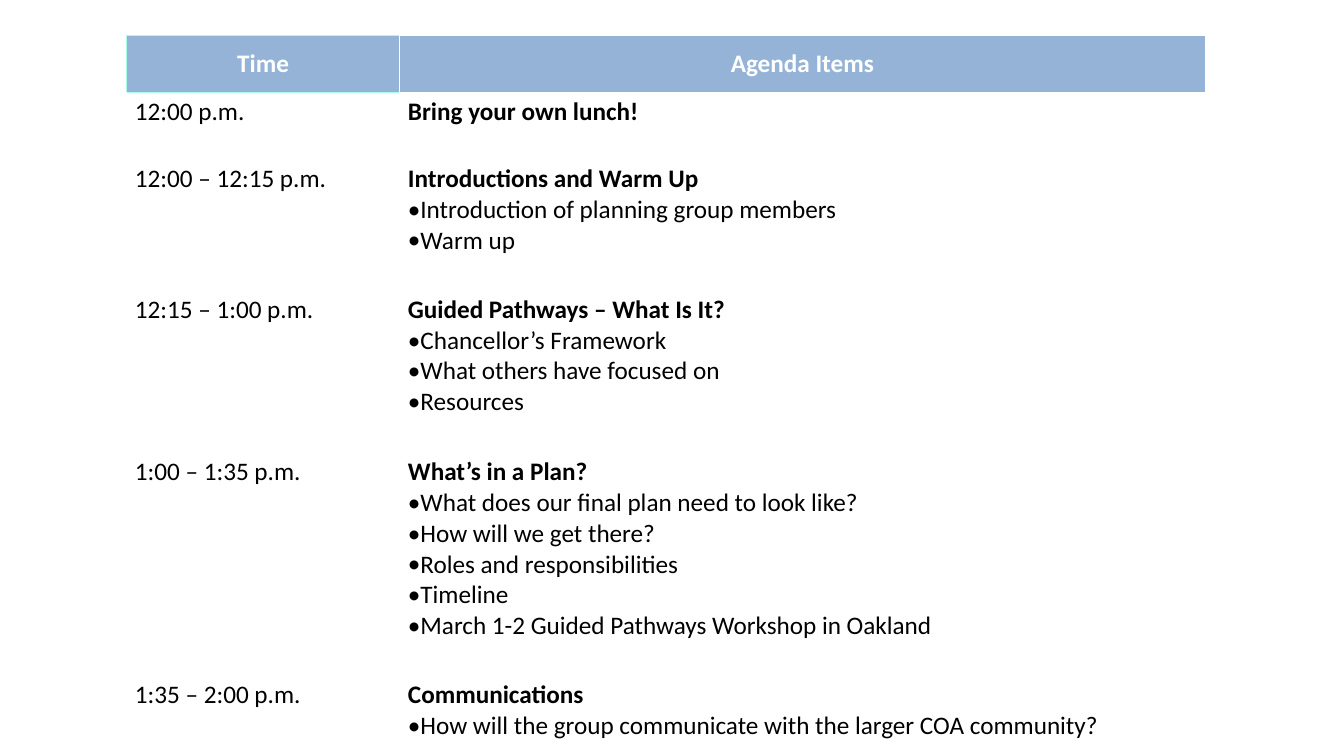
from lxml import etree
from pptx import Presentation
from pptx import util as u
from pptx.dml.color import RGBColor
from pptx.enum import text
from pptx.oxml import ns

HUES = {"head": "95B3D7", "mint": "A8FDEA", "white": "FFFFFF", "black": "000000"}
COLS = [6.88, 20.3]
HEADS = ["Time", "Agenda Items"]
AGENDA = [
    (1.68, "12:00 p.m.", "Bring your own lunch!", []),
    (3.3, "12:00 – 12:15 p.m.", "Introductions and Warm Up",
     ["Introduction of planning group members", "Warm up"]),
    (4.09, "12:15 – 1:00 p.m.", "Guided Pathways – What Is It?",
     ["Chancellor’s Framework", "What others have focused on", "Resources"]),
    (5.61, "1:00 – 1:35 p.m.", "What’s in a Plan?",
     ["What does our final plan need to look like?", "How will we get there?",
      "Roles and responsibilities", "Timeline",
      "March 1-2 Guided Pathways Workshop in Oakland"]),
    (3.68, "1:35 – 2:00 p.m.", "Communications",
     ["How will the group communicate with the larger COA community?"]),
]


def write(para, words, hue="black", bold=False, align=text.PP_ALIGN.LEFT, dot=False):
    para.alignment = align
    run = para.add_run()
    run.text = words
    font = run.font
    font.name, font.size, font.bold = "Calibri", u.Pt(18), bold
    font.color.rgb = RGBColor.from_string(HUES[hue])
    if dot:
        props = para._p.get_or_add_pPr()
        props.set("marL", "0")
        props.set("indent", "0")
        etree.SubElement(props, ns.qn("a:buFont")).set("typeface", "Calibri")
        etree.SubElement(props, ns.qn("a:buChar")).set("char", "•")


class Deck:
    def __init__(self):
        self.prs = Presentation()
        self.prs.slide_width = u.Cm(33.87)
        self.prs.slide_height = u.Cm(19.05)
        self.slide = self.prs.slides.add_slide(self.prs.slide_layouts[6])

    def grid(self, left, top, cols, rows):
        frame = self.slide.shapes.add_table(
            len(rows), len(cols), u.Cm(left), u.Cm(top), u.Cm(sum(cols)), u.Cm(sum(rows)))
        table = frame.table
        table.first_row = table.horz_banding = False
        for col, width in zip(table.columns, cols):
            col.width = u.Cm(width)
        for row, height in zip(table.rows, rows):
            row.height = u.Cm(height)
        return table

    def edge(self, cell, hues):
        props = cell._tc.get_or_add_tcPr()
        for spot, (side, hue) in enumerate(zip("LRTB", hues)):
            line = etree.Element(ns.qn(f"a:ln{side}"), w=str(u.Pt(0.75)))
            fill = etree.SubElement(line, ns.qn("a:solidFill"))
            etree.SubElement(fill, ns.qn("a:srgbClr")).set("val", HUES[hue])
            props.insert(spot, line)

    def cell(self, cell, lines, hues, fill=None, anchor=text.MSO_ANCHOR.TOP):
        cell.margin_left = cell.margin_right = u.Cm(0.21)
        cell.margin_top = cell.margin_bottom = u.Cm(0.1)
        cell.vertical_anchor = anchor
        if fill:
            cell.fill.solid()
            cell.fill.fore_color.rgb = RGBColor.from_string(HUES[fill])
        else:
            cell.fill.background()
        self.edge(cell, hues)
        frame = cell.text_frame
        for spot, (words, form) in enumerate(lines):
            para = frame.add_paragraph() if spot else frame.paragraphs[0]
            write(para, words, **form)


def main():
    deck = Deck()
    table = deck.grid(3.19, 0.89, COLS, [1.45] + [row[0] for row in AGENDA])
    plain = ["white"] * 4
    edges = [["mint"] * 4, plain]
    form = dict(hue="white", bold=True, align=text.PP_ALIGN.CENTER)
    for col, (words, hues) in enumerate(zip(HEADS, edges)):
        deck.cell(table.cell(0, col), [(words, form)], hues, "head", text.MSO_ANCHOR.MIDDLE)
    for row, (_, time, title, points) in enumerate(AGENDA, 1):
        hues = ["white", "white", "mint", "white"] if row == 1 else plain
        deck.cell(table.cell(row, 0), [(time, {})], hues)
        lines = [(title, {"bold": True})] + [(point, {"dot": True}) for point in points]
        deck.cell(table.cell(row, 1), lines, plain)
    deck.prs.save("out.pptx")


if __name__ == "__main__":
    main()
